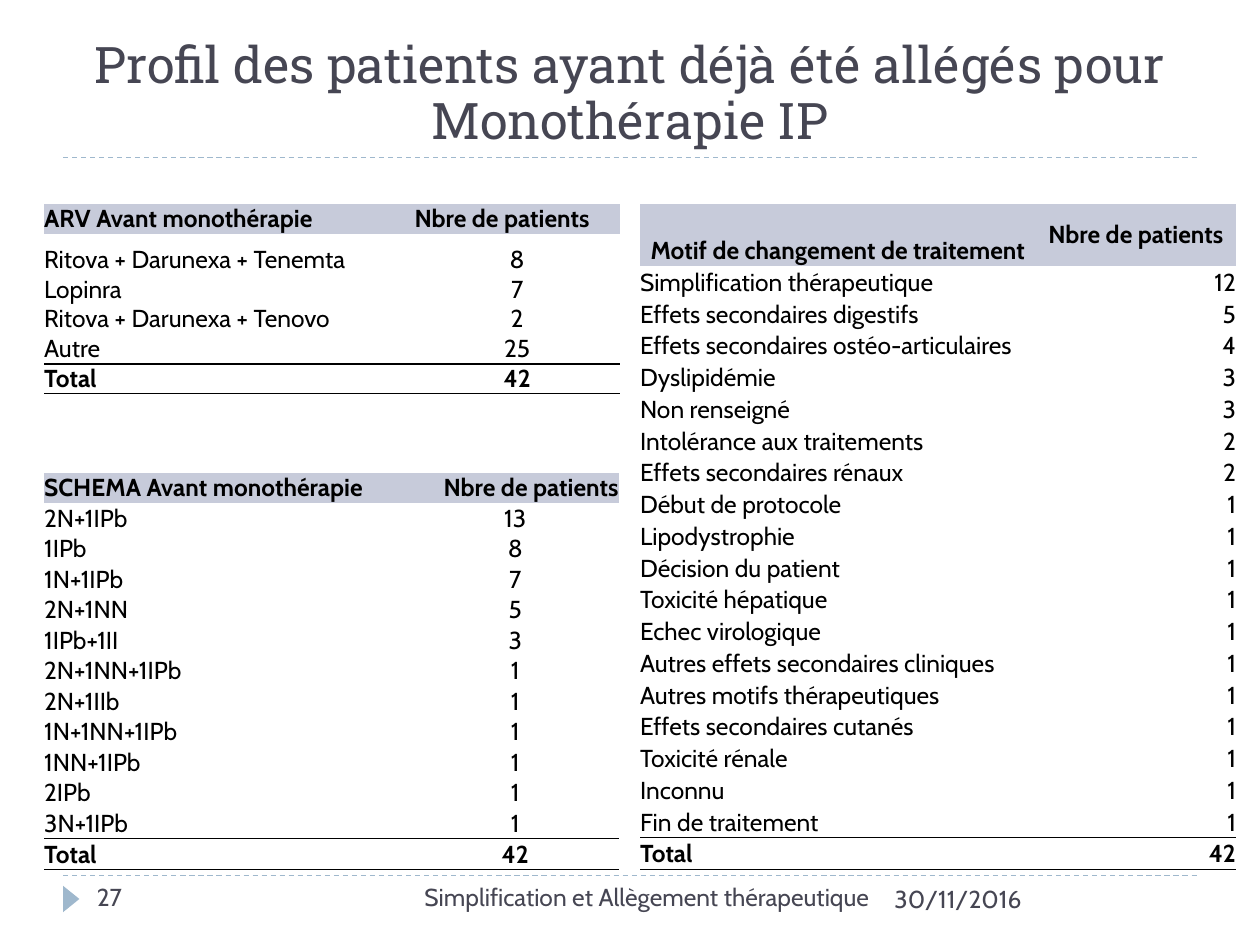
"""Build a slide of three tables on patients moved to protease inhibitor monotherapy."""
from lxml import etree
from pptx import Presentation
from pptx import util as u
from pptx.dml import color
from pptx.enum import dml, shapes, text
from pptx.oxml import ns

Inches = u.Inches


class Theme:
    ink = color.RGBColor.from_string("000000")
    slate = color.RGBColor.from_string("464653")
    accent = color.RGBColor.from_string("9FB8CD")
    band = color.RGBColor.from_string("C7CBDA")
    head = "Roboto Slab"
    body = "Cabin"
    big = 28.8
    small = 14
    plain = "{2D5ABB26-0587-4C30-8999-92F81FD0307C}"


LEFT, MID, RIGHT = text.PP_ALIGN.LEFT, text.PP_ALIGN.CENTER, text.PP_ALIGN.RIGHT
TOP, CENTRE, BASE = text.MSO_ANCHOR.TOP, text.MSO_ANCHOR.MIDDLE, text.MSO_ANCHOR.BOTTOM


def write(frame, words, size=Theme.small, font=Theme.body, ink=Theme.slate,
          bold=False, align=LEFT, space=None):
    para = frame.paragraphs[0]
    para.alignment = align
    para.line_spacing = space
    run = para.add_run()
    run.text = words
    run.font.size = u.Pt(size)
    run.font.name = font
    run.font.bold = bold
    run.font.color.rgb = ink


def rule(cell, side, width):
    line = etree.SubElement(cell._tc.get_or_add_tcPr(), ns.qn(f"a:ln{side}"), w=str(u.Pt(width)))
    fill = etree.SubElement(line, ns.qn("a:solidFill"))
    etree.SubElement(fill, ns.qn("a:srgbClr"), val=str(Theme.ink))


deck = Presentation()
deck.slide_width, deck.slide_height = Inches(10), Inches(7.5)
slide = deck.slides.add_slide(deck.slide_layouts[5])

for y in (6.95, 1.25):
    line = slide.shapes.add_connector(
        shapes.MSO_CONNECTOR.STRAIGHT, Inches(0.5), Inches(y), Inches(9.5), Inches(y))
    line.line.color.rgb = Theme.accent
    line.line.width = u.Pt(0.75)
    line.line.dash_style = dml.MSO_LINE.DASH
    etree.SubElement(line._element.spPr, ns.qn("a:effectLst"))

mark = slide.shapes.add_shape(
    shapes.MSO_SHAPE.ISOSCELES_TRIANGLE, Inches(0.46), Inches(7.07), Inches(0.21), Inches(0.13))
mark.rotation = 90
mark.shadow.inherit = False
mark.fill.solid()
mark.fill.fore_color.rgb = Theme.accent
mark.line.fill.background()

title = slide.shapes.title
title.left, title.top, title.width, title.height = map(Inches, (0.5, 0.17, 9, 1.08))
title.text_frame.auto_size = text.MSO_AUTO_SIZE.NONE
title.text_frame.vertical_anchor = BASE
write(title.text_frame, "Profil des patients ayant déjà été allégés pour Monothérapie IP",
      size=Theme.big, font=Theme.head, align=MID, space=0.93)

drugs = [
    ("ARV Avant monothérapie", "Nbre de patients"),
    ("Ritova + Darunexa + Tenemta", "8"),
    ("Lopinra", "7"),
    ("Ritova + Darunexa + Tenovo", "2"),
    ("Autre", "25"),
    ("Total", "42"),
]
plans = [
    ("SCHEMA Avant monothérapie", "Nbre de patients"),
    ("2N+1IPb", "13"),
    ("1IPb", "8"),
    ("1N+1IPb", "7"),
    ("2N+1NN", "5"),
    ("1IPb+1II", "3"),
    ("2N+1NN+1IPb", "1"),
    ("2N+1IIb", "1"),
    ("1N+1NN+1IPb", "1"),
    ("1NN+1IPb", "1"),
    ("2IPb", "1"),
    ("3N+1IPb", "1"),
    ("Total", "42"),
]
causes = [
    ("Motif de changement de traitement", "Nbre de patients"),
    ("Simplification thérapeutique", "12"),
    ("Effets secondaires digestifs", "5"),
    ("Effets secondaires ostéo-articulaires", "4"),
    ("Dyslipidémie", "3"),
    ("Non renseigné", "3"),
    ("Intolérance aux traitements", "2"),
    ("Effets secondaires rénaux", "2"),
    ("Début de protocole", "1"),
    ("Lipodystrophie", "1"),
    ("Décision du patient", "1"),
    ("Toxicité hépatique", "1"),
    ("Echec virologique", "1"),
    ("Autres effets secondaires cliniques", "1"),
    ("Autres motifs thérapeutiques", "1"),
    ("Effets secondaires cutanés", "1"),
    ("Toxicité rénale", "1"),
    ("Inconnu", "1"),
    ("Fin de traitement", "1"),
    ("Total", "42"),
]

grids = [
    (drugs, (0.35, 1.62, 4.57, 1.5), (2.94, 1.63), {1: 0.32}, (LEFT, LEFT), MID, BASE, 1),
    (plans, (0.35, 3.75, 4.57, 3.15), (2.92, 1.64), {}, (LEFT, RIGHT), MID, BASE, 0.5),
    (causes, (5.08, 1.62, 4.72, 5.28), (3.14, 1.59), {0: 0.49}, (MID, MID), RIGHT, CENTRE, 0.5),
]
for rows, area, cols, tall, heads, side, anchor, weight in grids:
    last = len(rows) - 1
    table = slide.shapes.add_table(len(rows), 2, *map(Inches, area)).table
    table.first_row = table.horz_banding = False
    table._tbl.tblPr.find(ns.qn("a:tableStyleId")).text = Theme.plain
    step = (area[3] - sum(tall.values())) / (len(rows) - len(tall))
    for col, width in zip(table.columns, cols):
        col.width = Inches(width)
    for r, row in enumerate(rows):
        table.rows[r].height = Inches(tall.get(r, step))
        for c, words in enumerate(row):
            cell = table.cell(r, c)
            cell.margin_left = cell.margin_right = cell.margin_top = cell.margin_bottom = 0
            cell.vertical_anchor = anchor if (r, c) == (0, 1) else BASE
            if r == last:
                rule(cell, "T", weight)
            if r >= last - 1:
                rule(cell, "B", 0.5 if r == last else weight)
            if r == 0:
                cell.fill.solid()
                cell.fill.fore_color.rgb = Theme.band
            else:
                cell.fill.background()
            write(cell.text_frame, words, ink=Theme.ink, bold=r in (0, last),
                  align=heads[c] if r == 0 else (LEFT, side)[c])

for words, x, y, width, align in [
    ("30/11/2016", 7, 6.97, 2.5, LEFT),
    ("Simplification et Allègement thérapeutique", 3.17, 6.95, 3.83, RIGHT),
    ("27", 0.67, 6.95, 2.17, LEFT),
]:
    box = slide.shapes.add_textbox(Inches(x), Inches(y), Inches(width), Inches(0.4))
    box.text_frame.word_wrap = True
    box.text_frame.vertical_anchor = TOP
    write(box.text_frame, words, align=align)

deck.save("out.pptx")
